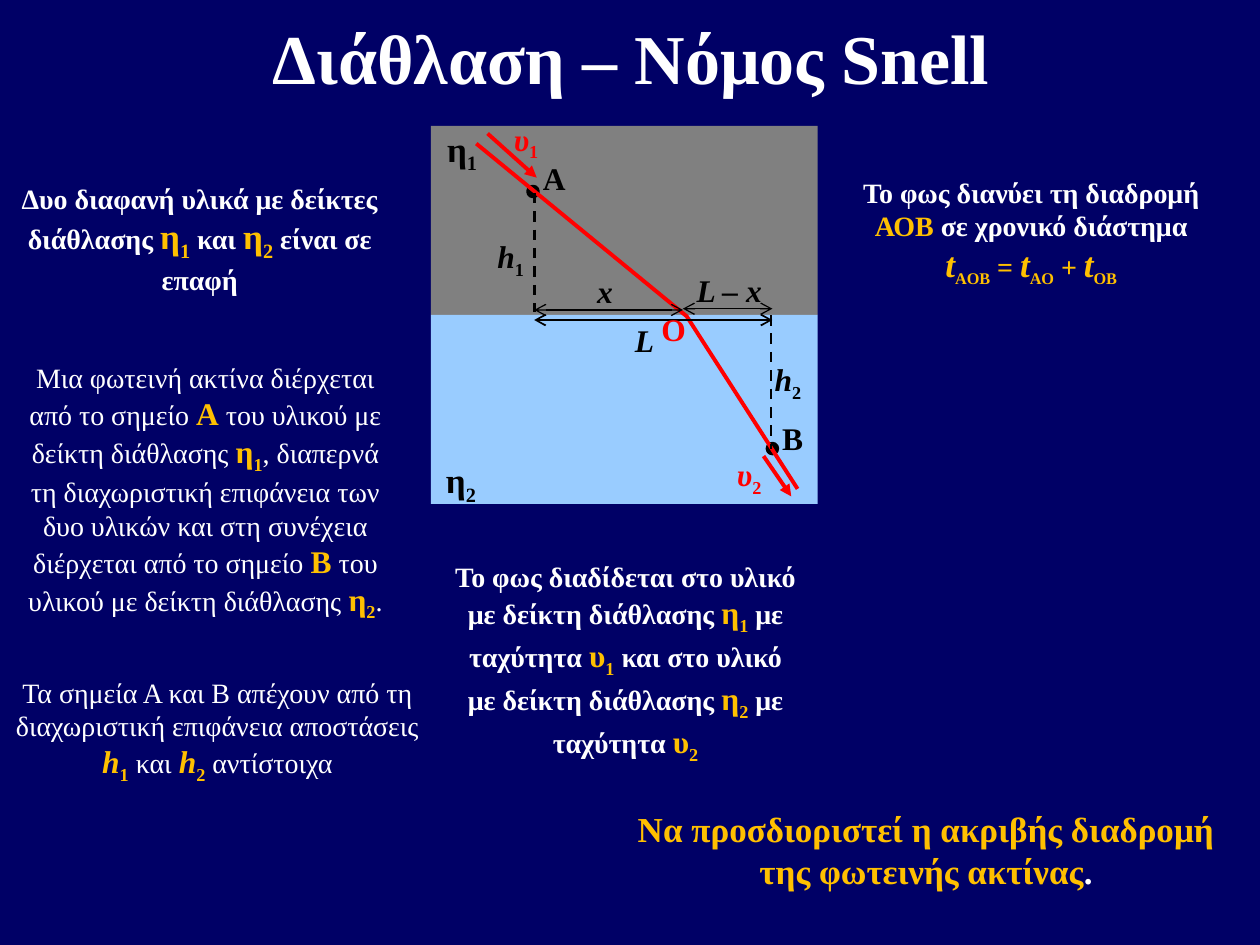
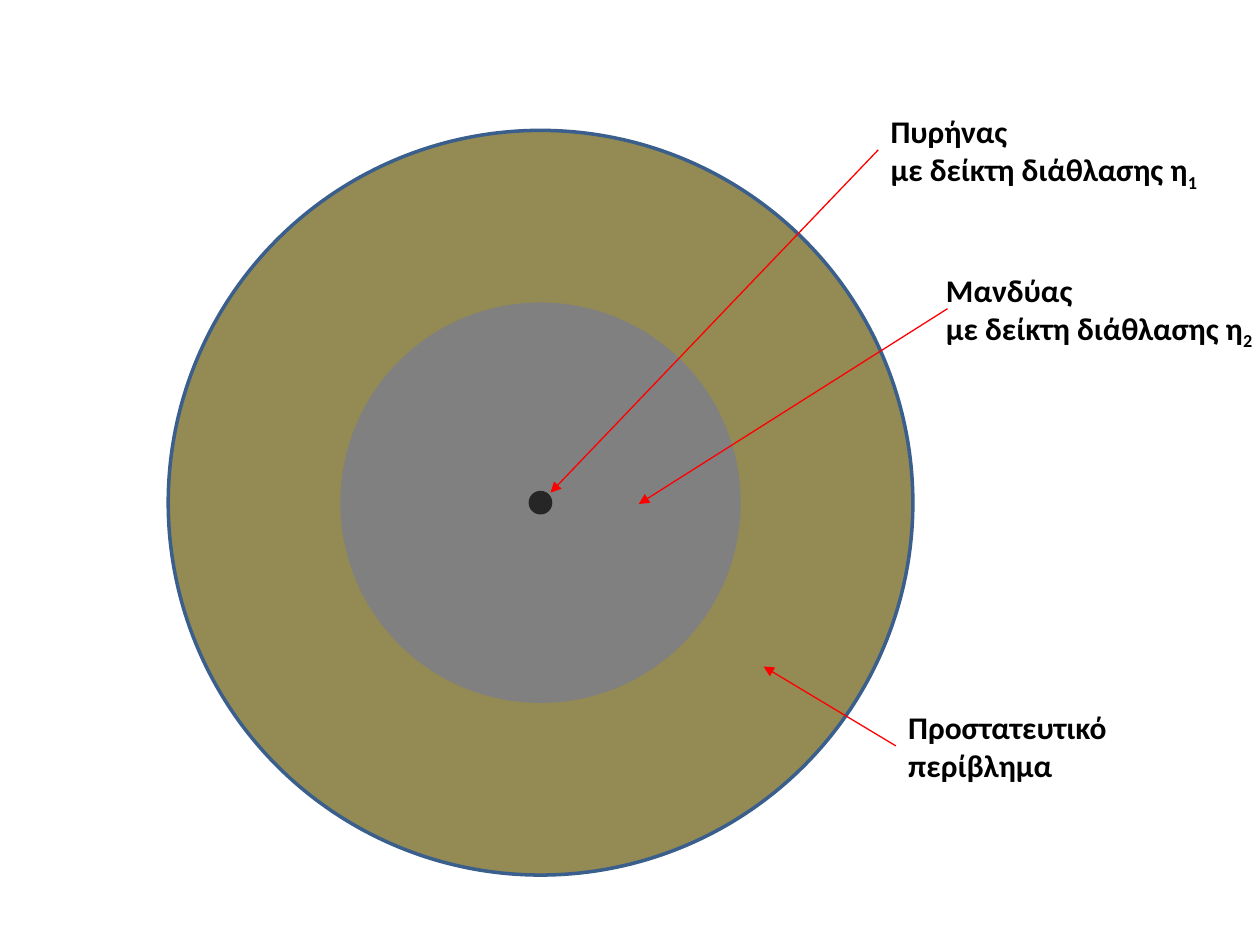
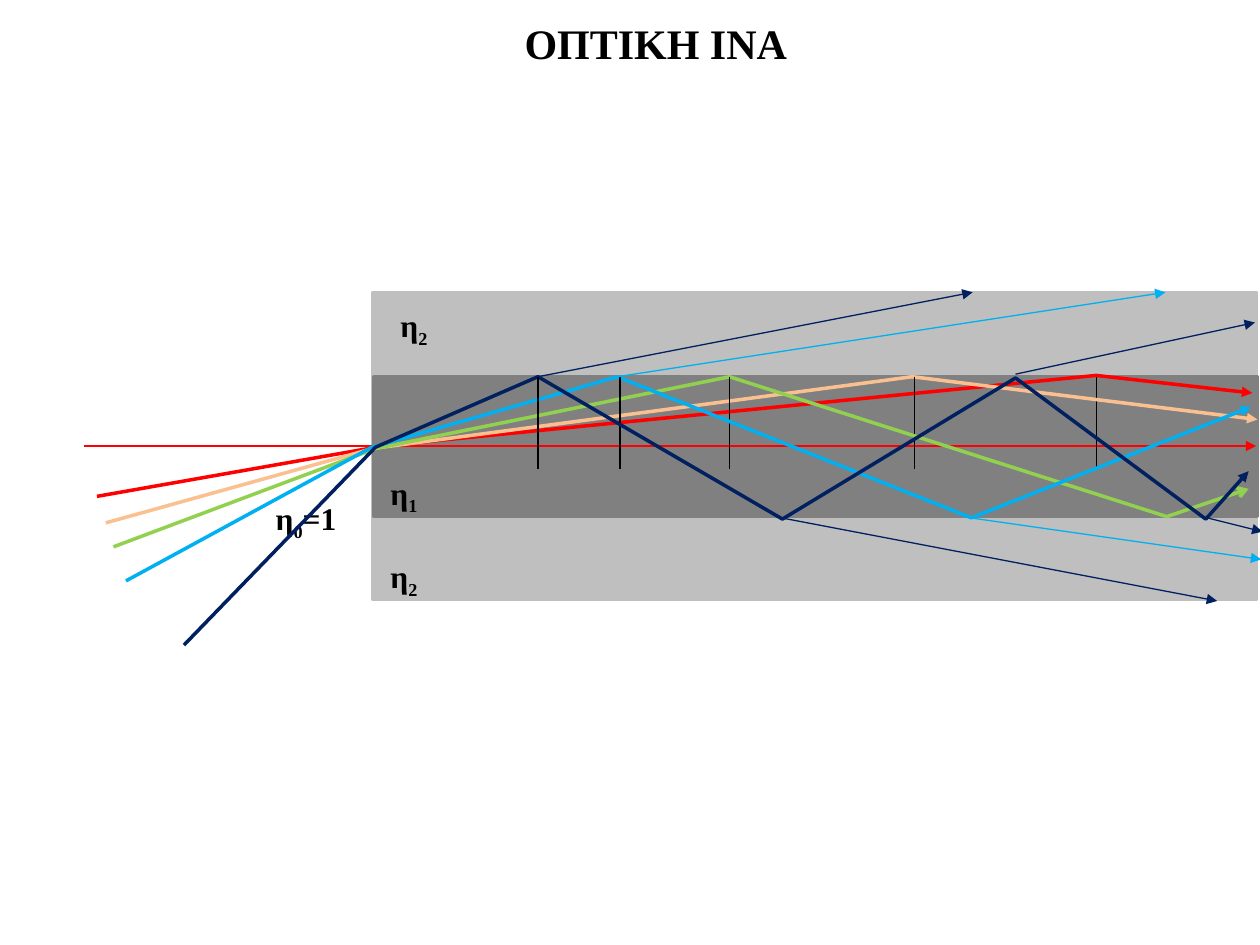
from pptx import Presentation
from pptx.dml.color import RGBColor
from pptx.enum.dml import MSO_LINE
from pptx.enum.shapes import MSO_CONNECTOR, MSO_SHAPE
from pptx.enum.text import MSO_ANCHOR, MSO_AUTO_SIZE, PP_ALIGN
from pptx.oxml.ns import qn
from pptx.util import Inches, Pt
from lxml import etree

RECT, CIRCLE = MSO_SHAPE.RECTANGLE, MSO_SHAPE.OVAL
STRAIGHT = MSO_CONNECTOR.STRAIGHT
DASH = MSO_LINE.DASH
CENTER, LEFT = PP_ALIGN.CENTER, PP_ALIGN.LEFT
MIDDLE = MSO_ANCHOR.MIDDLE
FIT_SHAPE, NO_FIT = MSO_AUTO_SIZE.SHAPE_TO_FIT_TEXT, MSO_AUTO_SIZE.NONE

SERIF, SANS = "Times New Roman", "Calibri"
BLACK, WHITE, NAVY = "000000", "FFFFFF", "000066"
RED, GOLD, GRAY = "FF0000", "FFC000", "808080"
SKY, SILVER, OLIVE = "99CCFF", "BFBFBF", "948A54"
PEACH, GREEN, CYAN, INDIGO = "FAC090", "92D050", "00B0F0", "002060"


def rgb(value):
    return RGBColor.from_string(value)


# Text

def style_font(font, size=None, color=None, bold=None, italic=None, name=None):
    if size:
        font.size = Pt(size)
    if color:
        font.color.rgb = rgb(color)
    if bold is not None:
        font.bold = bold
    if italic is not None:
        font.italic = italic
    if name:
        font.name = name


def symbol(letter, sub, sub_size=None, italic=None, **style):
    """Runs for a letter followed by its subscript."""
    sub_style = dict(style, sub=True)
    if sub_size:
        sub_style["size"] = sub_size
    return [(letter, dict(style, italic=italic)), (sub, sub_style)]


def fill_paragraph(paragraph, runs, align=LEFT, **style):
    """Runs are plain strings or (text, overrides) pairs."""
    paragraph.alignment = align
    style_font(paragraph.font, **style)
    for item in runs:
        text, overrides = (item, {}) if isinstance(item, str) else item
        overrides = dict(overrides)
        subscript = overrides.pop("sub", False)
        run = paragraph.add_run()
        run.text = text
        style_font(run.font, **overrides)
        if subscript:
            run.font._element.set("baseline", "-25000")


def add_text(slide, box, *paragraphs, wrap=False, **style):
    frame = slide.shapes.add_textbox(*map(Inches, box)).text_frame
    frame.word_wrap = wrap
    frame.auto_size = FIT_SHAPE
    for index, runs in enumerate(paragraphs):
        paragraph = frame.add_paragraph() if index else frame.paragraphs[0]
        fill_paragraph(paragraph, runs, **style)


def add_note(slide, box, *runs, size=16, color=WHITE, bold=True):
    add_text(slide, box, runs, wrap=True, align=CENTER, size=size,
             color=color, bold=bold, name=SERIF)


def add_mark(slide, left, top, letter, sub="", width=0.43, size=18,
             color=BLACK, italic=None, wrap=False):
    """Bold serif letter of a diagram, with an optional subscript."""
    runs = symbol(letter, sub, italic=italic) if sub else [(letter, {"italic": italic})]
    add_text(slide, (left, top, width, 0.44 if size == 20 else 0.4), runs,
             wrap=wrap, size=size, color=color, bold=True, name=SERIF)


def add_title(slide, box, text, size, color):
    title = slide.shapes.title
    title.left, title.top, title.width, title.height = map(Inches, box)
    frame = title.text_frame
    frame.auto_size = NO_FIT
    frame.vertical_anchor = MIDDLE
    fill_paragraph(frame.paragraphs[0], [text], CENTER, size=size, color=color,
                   bold=True, name=SERIF)


# Shapes and lines

def add_figure(slide, kind, box, fill, outline=None):
    figure = slide.shapes.add_shape(kind, *map(Inches, box))
    figure.shadow.inherit = False
    figure.fill.solid()
    figure.fill.fore_color.rgb = rgb(fill)
    if outline:
        figure.line.color.rgb = rgb(outline)
        figure.line.width = Pt(2)
    else:
        figure.line.fill.background()


def add_disc(slide, center, diameter, fill, outline):
    x, y = center
    box = (x - diameter / 2, y - diameter / 2, diameter, diameter)
    add_figure(slide, CIRCLE, box, fill, outline)


def style_line(shape, color, width, head=None, tail=None, dash=None):
    shape.line.color.rgb = rgb(color)
    shape.line.width = Pt(width)
    if dash:
        shape.line.dash_style = dash
    outline = shape.element.spPr.find(qn("a:ln"))
    for tag, end in (("a:headEnd", head), ("a:tailEnd", tail)):
        if end:
            etree.SubElement(outline, qn(tag)).set("type", end)


def add_line(slide, start, end, color=BLACK, width=0.75, **ends):
    line = slide.shapes.add_connector(STRAIGHT, *map(Inches, (*start, *end)))
    style_line(line, color, width, **ends)
    etree.SubElement(line.element.spPr, qn("a:effectLst"))


def add_ray(slide, points, color, width, tail=None):
    start, *rest = [(Inches(x), Inches(y)) for x, y in points]
    builder = slide.shapes.build_freeform(*start)
    builder.add_line_segments(rest, close=False)
    ray = builder.convert_to_shape()
    ray.shadow.inherit = False
    ray.fill.background()
    style_line(ray, color, width, tail=tail)


# Slides

def new_slide(deck, background, titled=True):
    slide = deck.slides.add_slide(deck.slide_layouts[5 if titled else 6])
    slide.background.fill.solid()
    slide.background.fill.fore_color.rgb = rgb(background)
    return slide


def build_refraction(deck):
    slide = new_slide(deck, NAVY)
    add_title(slide, (0.51, 0.05, 9, 0.79), "Διάθλαση – Νόμος Snell", 40, WHITE)

    # Two media, points A and B, and the light ray
    for top, fill in ((1, GRAY), (2.5, SKY)):
        add_figure(slide, RECT, (3.42, top, 3.07, 1.5), fill)
    for point in ((4.23, 1.52), (6.13, 3.56)):
        add_disc(slide, point, 0.08, BLACK, BLACK)
    add_ray(slide, [(3.78, 1.14), (5.45, 2.51), (6.33, 3.88)], RED, 2.25)
    for start, end in (((6.06, 3.62), (6.28, 3.94)), ((3.87, 1.06), (4.26, 1.41))):
        add_line(slide, start, end, RED, 2.25, tail="triangle")

    # Heights and distances
    for start, end in (((4.24, 1.53), (4.24, 2.48)), ((6.12, 2.5), (6.12, 3.56))):
        add_line(slide, start, end, width=1.5, dash=DASH)
    for left, right, y, width in ((4.24, 6.13, 2.54, 1), (4.24, 5.42, 2.46, 0.75),
                                  (5.42, 6.13, 2.45, 0.75)):
        add_line(slide, (left, y), (right, y), width=width, head="arrow", tail="arrow")

    # Letters of the diagram
    add_mark(slide, 3.45, 0.96, "η", "1", width=0.45, size=20)
    add_mark(slide, 3.44, 3.59, "η", "2", width=0.45, size=20)
    add_mark(slide, 4.21, 1.21, "Α", width=0.38)
    add_mark(slide, 6.11, 3.28, "Β", width=0.38)
    add_mark(slide, 5.15, 2.41, "O", width=0.4, color=RED)
    add_mark(slide, 3.98, 0.9, "υ", "1", color=RED, italic=True)
    add_mark(slide, 5.75, 3.56, "υ", "2", color=RED, italic=True)
    add_mark(slide, 3.85, 1.83, "h", "1", italic=True)
    add_mark(slide, 6.05, 2.81, "h", "2", italic=True)
    add_mark(slide, 4.94, 2.5, "L", width=0.36, italic=True)
    add_mark(slide, 4.64, 2.11, "x", width=0.33, italic=True)
    add_mark(slide, 5.43, 2.1, "L – x", width=0.75, italic=True, wrap=True)

    # Explanations
    large = dict(size=20, color=GOLD)
    key = dict(size=18, color=GOLD, bold=True)
    add_note(slide, (0.06, 1.39, 3.05, 0.98),
             "Δυο διαφανή υλικά με δείκτες διάθλασης ", *symbol("η", "1", **large),
             " και ", *symbol("η", "2", **large), " είναι σε επαφή")
    add_note(slide, (0.04, 2.81, 3.18, 2.12),
             "Μια φωτεινή ακτίνα διέρχεται από το σημείο ", ("Α", key),
             " του υλικού με δείκτη διάθλασης ", *symbol("η", "1", **key),
             ", διαπερνά τη διαχωριστική επιφάνεια των δυο υλικών και στη "
             "συνέχεια διέρχεται από το σημείο ", ("Β", key),
             " του υλικού με δείκτη διάθλασης ", *symbol("η", "2", **key), ".",
             bold=False)
    add_note(slide, (0, 5.31, 3.45, 0.94),
             "Τα σημεία Α και Β απέχουν από τη διαχωριστική επιφάνεια αποστάσεις ",
             *symbol("h", "1", italic=True, **key), " και ",
             *symbol("h", "2", italic=True, **key), " αντίστοιχα", bold=False)
    add_note(slide, (3.5, 4.39, 2.93, 1.58),
             "Το φως διαδίδεται στο υλικό με δείκτη διάθλασης ",
             *symbol("η", "1", **key), " με ταχύτητα ", *symbol("υ", "1", **key),
             " και στο υλικό με δείκτη διάθλασης ", *symbol("η", "2", **key),
             " με ταχύτητα ", *symbol("υ", "2", **key))
    time = dict(sub_size=16, italic=True, **large)
    gold = dict(color=GOLD)
    add_note(slide, (6.72, 1.34, 2.93, 0.98),
             "Το φως διανύει τη διαδρομή ", ("ΑΟΒ", gold), " σε χρονικό διάστημα ",
             *symbol("t", "AOB", **time), (" = ", gold), *symbol("t", "AO", **time),
             (" + ", gold), *symbol("t", "OB", **time))
    add_note(slide, (4.85, 6.36, 5, 0.77),
             "Να προσδιοριστεί η ακριβής διαδρομή της φωτεινής ακτίνας",
             (".", dict(color=WHITE)), size=20, color=GOLD)


def build_cross_section(deck):
    slide = new_slide(deck, WHITE, titled=False)

    # Jacket, cladding and core share one centre
    for diameter, fill, outline in ((5.91, OLIVE, "3A5F8C"), (3.15, GRAY, GRAY),
                                    (0.16, "262626", "262626")):
        add_disc(slide, (4.29, 3.99), diameter, fill, outline)

    # Callouts
    index = "με δείκτη διάθλασης "
    callouts = (
        ((6.97, 0.84, 2.67, 0.71), "Πυρήνας", [index, *symbol("η", "1")],
         (6.97, 1.19), (4.37, 3.91)),
        ((7.41, 2.1, 2.76, 0.71), "Μανδύας", [index, *symbol("η", "2")],
         (7.52, 2.45), (5.07, 4)),
        ((7.11, 5.57, 1.79, 0.71), "Προστατευτικό", ["περίβλημα"],
         (7.11, 5.92), (6.06, 5.29)),
    )
    for box, part, detail, start, end in callouts:
        add_line(slide, start, end, RED, tail="triangle")
        add_text(slide, box, [part], detail, size=18, color=BLACK, bold=True, name=SANS)


def build_fibre(deck):
    slide = new_slide(deck, WHITE)
    add_title(slide, (4.05, 0.09, 2.31, 0.5), "ΟΠΤΙΚΗ ΙΝΑ", 24, BLACK)
    slide.shapes.title.text_frame.word_wrap = False

    # Cladding, core and refractive indices
    add_figure(slide, RECT, (2.96, 2.32, 7.01, 2.44), SILVER, SILVER)
    add_figure(slide, RECT, (2.97, 2.99, 7.01, 1.11), GRAY, GRAY)
    for left, top, sub in ((3, 3.71, "1"), (3, 4.37, "2"), (3.08, 2.38, "2")):
        add_mark(slide, left, top, "η", sub)
    add_text(slide, (2.09, 3.91, 0.84, 0.4), [*symbol("η", "0"), "=1"], wrap=True,
             size=18, color=BLACK, bold=True, name=SERIF)

    # Axial ray
    add_line(slide, (0.67, 3.54), (9.97, 3.54), RED, 1.5, tail="triangle")

    # Each ray: colour, arrowhead, path, normal position, rays leaking out
    rays = (
        (RED, "triangle", [(0.77, 3.94), (3.04, 3.54), (8.7, 2.98), (9.94, 3.12)],
         8.7, []),
        (PEACH, "triangle", [(0.84, 4.15), (2.96, 3.56), (7.24, 2.99), (9.98, 3.33)],
         7.26, []),
        (GREEN, "arrow", [(0.9, 4.34), (2.98, 3.56), (5.79, 2.99), (9.26, 4.1),
                          (9.91, 3.88)], 5.79, []),
        (CYAN, "triangle", [(1, 4.61), (2.95, 3.55), (4.9, 2.99), (7.71, 4.11),
                            (9.93, 3.23)], 4.92,
         [((4.9, 2.99), (9.25, 2.32)), ((7.7, 4.11), (10.01, 4.44))]),
        (INDIGO, "triangle", [(1.46, 5.12), (2.98, 3.55), (4.27, 2.99), (6.21, 4.12),
                              (8.06, 3), (9.57, 4.12), (9.91, 3.74)], 4.27,
         [((4.27, 2.99), (7.72, 2.32)), ((6.2, 4.11), (9.66, 4.77)),
          ((8.06, 2.97), (9.96, 2.56)), ((9.58, 4.11), (10.02, 4.22))]),
    )
    for color, arrow, points, normal_x, leaks in rays:
        add_ray(slide, points, color, 2, tail=arrow)
        add_line(slide, (normal_x, 2.99), (normal_x, 3.72))
        for start, end in leaks:
            add_line(slide, start, end, color, tail="triangle")


def main():
    deck = Presentation()
    deck.slide_width, deck.slide_height = Inches(10), Inches(7.5)
    build_refraction(deck)
    build_cross_section(deck)
    build_fibre(deck)
    deck.save("out.pptx")


if __name__ == "__main__":
    main()
